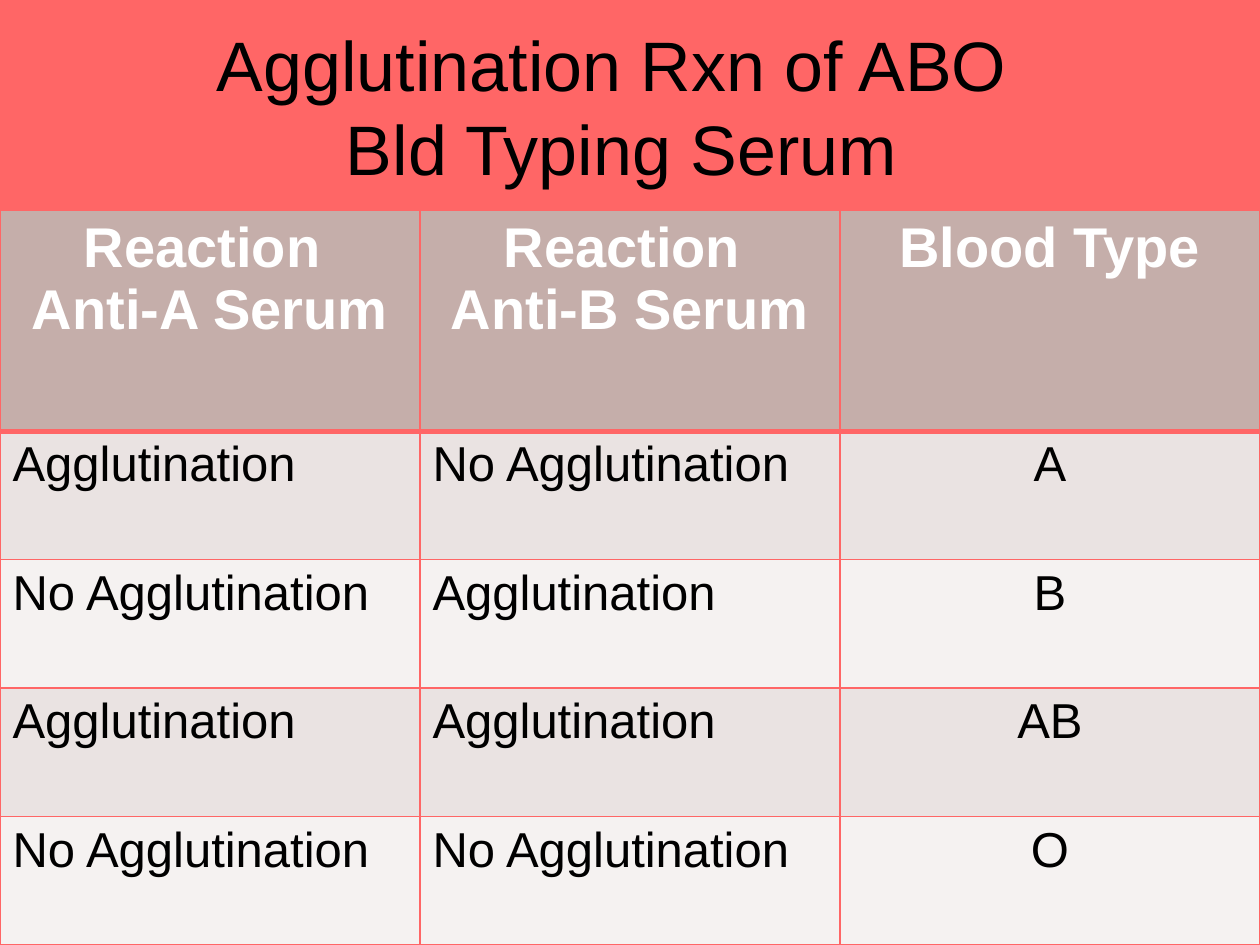
from dataclasses import dataclass
from typing import Any

from lxml.etree import SubElement
from pptx import Presentation
from pptx.dml.color import RGBColor as Rgb
from pptx.enum.text import MSO_ANCHOR as Anchor, PP_ALIGN as Align
from pptx.oxml.ns import qn
from pptx.util import Pt


@dataclass(frozen=True)
class Theme:
    face: str = "Arial"
    back: str = "FF6666"
    ink: str = "000000"
    light: str = "FFFFFF"
    head: str = "C5AEAA"
    bands: tuple[str, str] = ("EAE3E2", "F5F2F1")
    title: int = 40
    label: int = 32
    body: int = 28


@dataclass(frozen=True)
class Style:
    size: int
    color: str
    bold: bool = False


@dataclass(frozen=True)
class Row:
    anti_a: str
    anti_b: str
    blood: str


THEME = Theme()
TITLE = Style(THEME.title, THEME.ink)
LABEL = Style(THEME.label, THEME.light, True)
BODY = Style(THEME.body, THEME.ink)
WIDTH, HEIGHT = 720, 540
TOP, HEAD = 120, 126.5
YES, NO = "Agglutination", "No Agglutination"
ROWS = [
    Row("Reaction \nAnti-A Serum", "Reaction \nAnti-B Serum", "Blood Type"),
    Row(YES, NO, "A"),
    Row(NO, YES, "B"),
    Row(YES, YES, "AB"),
    Row(NO, NO, "O"),
]


def write(frame: Any, text: str, style: Style, align: Align) -> None:
    frame.text = text
    looks = {"name": THEME.face, "size": Pt(style.size), "bold": style.bold}
    for para in frame.paragraphs:
        para.alignment = align
        for run in para.runs:
            for key, value in looks.items():
                setattr(run.font, key, value)
            run.font.color.rgb = Rgb.from_string(style.color)


def edge(cell: Any, side: str, width: float) -> None:
    """Draw one border; call before the fill, which must follow it in the XML."""
    props = cell._tc.get_or_add_tcPr()
    line = SubElement(props, qn(f"a:ln{side}"), w=str(Pt(width)))
    fill = SubElement(line, qn("a:solidFill"))
    SubElement(fill, qn("a:srgbClr"), val=THEME.back)


def add_title(slide: Any) -> None:
    box = slide.shapes.add_textbox(Pt(0), Pt(21.6), Pt(710), Pt(90))
    frame = box.text_frame
    frame.word_wrap = True
    frame.vertical_anchor = Anchor.BOTTOM
    write(frame, "Agglutination Rxn of ABO \vBld Typing Serum", TITLE, Align.CENTER)


def add_grid(slide: Any) -> None:
    high = HEIGHT - TOP
    grid = slide.shapes.add_table(
        len(ROWS), 3, Pt(0), Pt(TOP), Pt(WIDTH), Pt(high)
    ).table
    for col in grid.columns:
        col.width = Pt(WIDTH / 3)
    for i, row in enumerate(ROWS):
        top = i == 0
        grid.rows[i].height = Pt(HEAD if top else (high - HEAD) / (len(ROWS) - 1))
        for j, text in enumerate((row.anti_a, row.anti_b, row.blood)):
            cell = grid.cell(i, j)
            mid = top or j == 2
            write(cell.text_frame, text, LABEL if top else BODY,
                  Align.CENTER if mid else Align.LEFT)
            thick = {"L": 1, "R": 1, "T": 3 if i == 1 else 1, "B": 3 if top else 1}
            for side, width in thick.items():
                edge(cell, side, width)
            cell.fill.solid()
            tint = THEME.head if top else THEME.bands[(i - 1) % 2]
            cell.fill.fore_color.rgb = Rgb.from_string(tint)


def main() -> None:
    deck = Presentation()
    deck.slide_width, deck.slide_height = Pt(WIDTH), Pt(HEIGHT)
    slide = deck.slides.add_slide(deck.slide_layouts[6])
    back = slide.background.fill
    back.solid()
    back.fore_color.rgb = Rgb.from_string(THEME.back)
    add_title(slide)
    add_grid(slide)
    deck.save("out.pptx")


if __name__ == "__main__":
    main()
